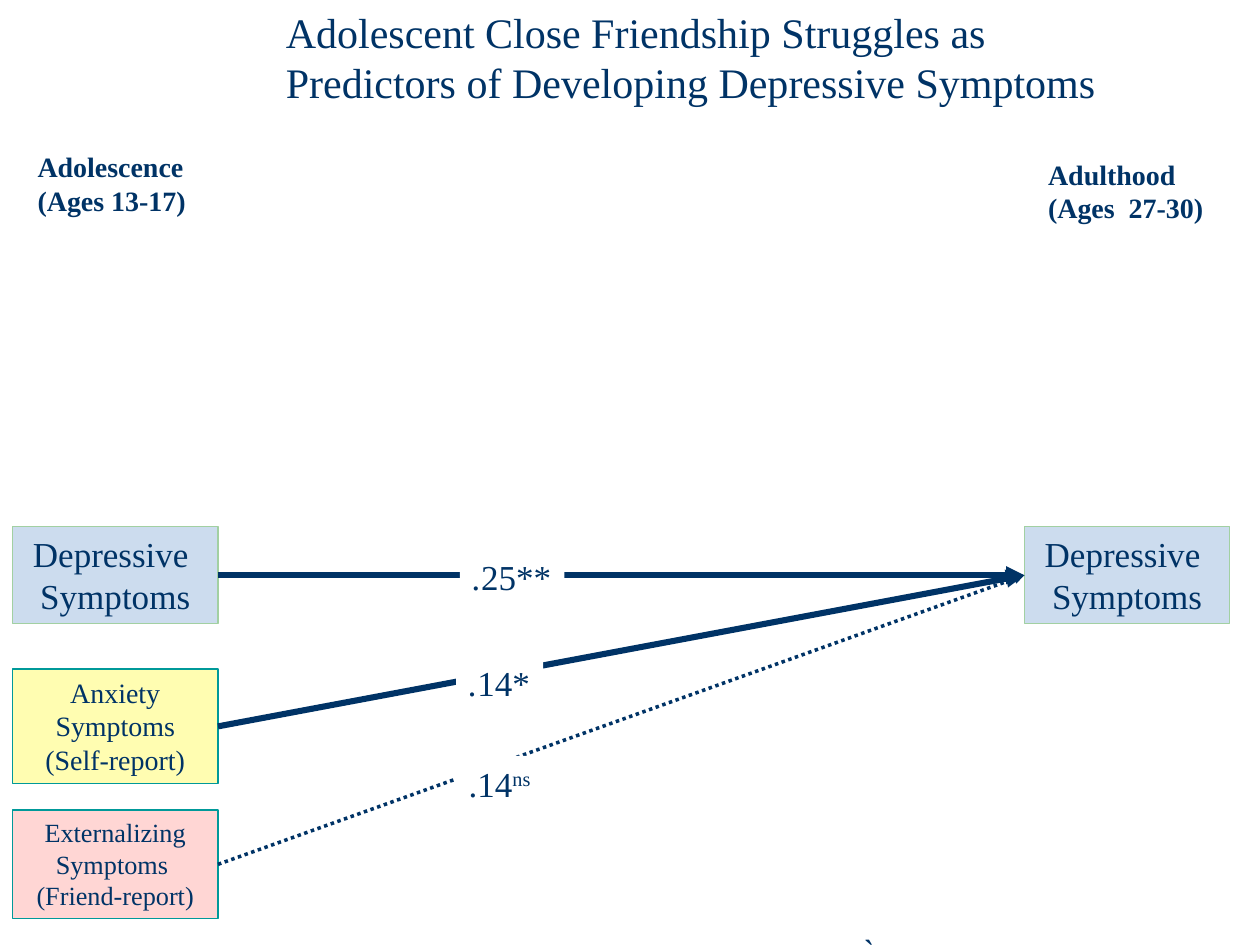
from lxml import etree
from pptx import Presentation
from pptx.dml.color import RGBColor
from pptx.enum.dml import MSO_LINE
from pptx.enum.shapes import MSO_CONNECTOR, MSO_SHAPE
from pptx.enum.text import MSO_ANCHOR, MSO_AUTO_SIZE, PP_ALIGN
from pptx.oxml.ns import qn
from pptx.util import Pt

SCALE = 9144  # EMU per px, 100 px to the inch
FONT = "Times New Roman"
RECT, STRAIGHT = MSO_SHAPE.RECTANGLE, MSO_CONNECTOR.STRAIGHT
CENTER, LEFT, TOP = PP_ALIGN.CENTER, PP_ALIGN.LEFT, MSO_ANCHOR.TOP
FIT, DOTS = MSO_AUTO_SIZE.SHAPE_TO_FIT_TEXT, MSO_LINE.ROUND_DOT
LEFT_SITE, RIGHT_SITE = 1, 3
COLORS = {
    "ink": "003366", "label": "FFFFFF",
    "blue": "CCDCEE", "yellow": "FFFDB1", "pink": "FFD6D4",
    "green line": "A2D0A2", "teal line": "009999",
}

# Text: lines, place (left, top, width, height), size, bold, italic
TEXTS = [
    (["Adolescent Close Friendship Struggles as",
      "Predictors of Developing Depressive Symptoms"],
     (217, 0, 669, 91), 24, False, False),
    (["Adolescence", "(Ages 13-17)"], (20, 114, 139, 64), 16, True, False),
    (["Adulthood", "(Ages  27-30)"], (822, 120, 145, 64), 16, True, False),
    (["`"], (673, 733, 29, 44), 20, False, True),
]

# Variables: lines, left, top, height, size, fill, line
BOX_WIDTH = 163
DEPRESSIVE = ["Depressive ", "Symptoms"]
VARIABLES = {
    "teen depression": (DEPRESSIVE, 10, 418, 77, 20, "blue", "green line"),
    "anxiety": (["Anxiety", "Symptoms", "(Self-report)"],
                10, 531, 91, 16, "yellow", "teal line"),
    "externalizing": (["Externalizing", "Symptoms ", "(Friend-report)"],
                      10, 643, 86, 15, "pink", "teal line"),
    "adult depression": (DEPRESSIVE, 813, 418, 77, 20, "blue", "green line"),
}

# Paths to adult depression: start, line width, dash
PATHS = [
    ("teen depression", 3.5, None),
    ("externalizing", 2, DOTS),
    ("anxiety", 3.5, None),
]

# Path coefficients: (text, italic, superscript) spans, place
COEFFICIENTS = [
    ([(".", True, False), ("25**", False, False)], (365, 436, 83, 44)),
    ([(".14", False, False), ("ns", False, True)], (362, 600, 72, 44)),
    ([(".", True, False), ("14*", False, False)], (362, 520, 69, 44)),
]


def color(name):
    return RGBColor.from_string(COLORS[name])


def emu(place):
    return [px * SCALE for px in place]


def style(span, size, bold=False, italic=False):
    font = span.font
    font.name, font.size, font.bold, font.italic = FONT, Pt(size), bold, italic
    font.color.rgb = color("ink")


def set_frame(shape, wrap):
    frame = shape.text_frame
    frame.word_wrap, frame.auto_size, frame.vertical_anchor = wrap, FIT, TOP
    return frame


def write(frame, lines, size, align=LEFT, bold=False, italic=False):
    frame.text = "\n".join(lines)
    for para in frame.paragraphs:
        para.alignment = align
        for span in para.runs:
            style(span, size, bold, italic)


def add_rect(page, place, fill, line=None):
    box = page.shapes.add_shape(RECT, *emu(place))
    box.shadow.inherit = False
    box.fill.solid()
    box.fill.fore_color.rgb = color(fill)
    if line:
        box.line.color.rgb = color(line)
        box.line.width = Pt(0.75)
    else:
        box.line.fill.background()
    return box


def add_arrow(page, start, end, width, dash):
    arrow = page.shapes.add_connector(STRAIGHT, 0, 0, 0, 0)
    arrow.begin_connect(start, RIGHT_SITE)
    arrow.end_connect(end, LEFT_SITE)
    arrow.line.color.rgb = color("ink")
    arrow.line.width = Pt(width)
    if dash:
        arrow.line.dash_style = dash
    properties = arrow._element.spPr
    etree.SubElement(properties.find(qn("a:ln")), qn("a:tailEnd"), type="triangle")
    etree.SubElement(properties, qn("a:effectLst"))


def main():
    deck = Presentation()
    deck.slide_width, deck.slide_height = emu((1000, 750))
    page = deck.slides.add_slide(deck.slide_layouts[6])

    # Title and headings
    for lines, place, size, bold, italic in TEXTS:
        box = page.shapes.add_textbox(*emu(place))
        write(set_frame(box, False), lines, size, LEFT, bold, italic)

    # Variable boxes
    boxes = {}
    for name, (lines, left, top, height, size, fill, line) in VARIABLES.items():
        box = add_rect(page, (left, top, BOX_WIDTH, height), fill, line)
        write(set_frame(box, True), lines, size, CENTER)
        boxes[name] = box

    # Prediction paths
    for start, width, dash in PATHS:
        add_arrow(page, boxes[start], boxes["adult depression"], width, dash)

    # Coefficients over the paths
    for spans, place in COEFFICIENTS:
        para = set_frame(add_rect(page, place, "label"), False).paragraphs[0]
        para.alignment = LEFT
        for text, italic, superscript in spans:
            span = para.add_run()
            span.text = text
            style(span, 20, italic=italic)
            if superscript:
                span._r.get_or_add_rPr().set("baseline", "30000")

    deck.save("out.pptx")


if __name__ == "__main__":
    main()
